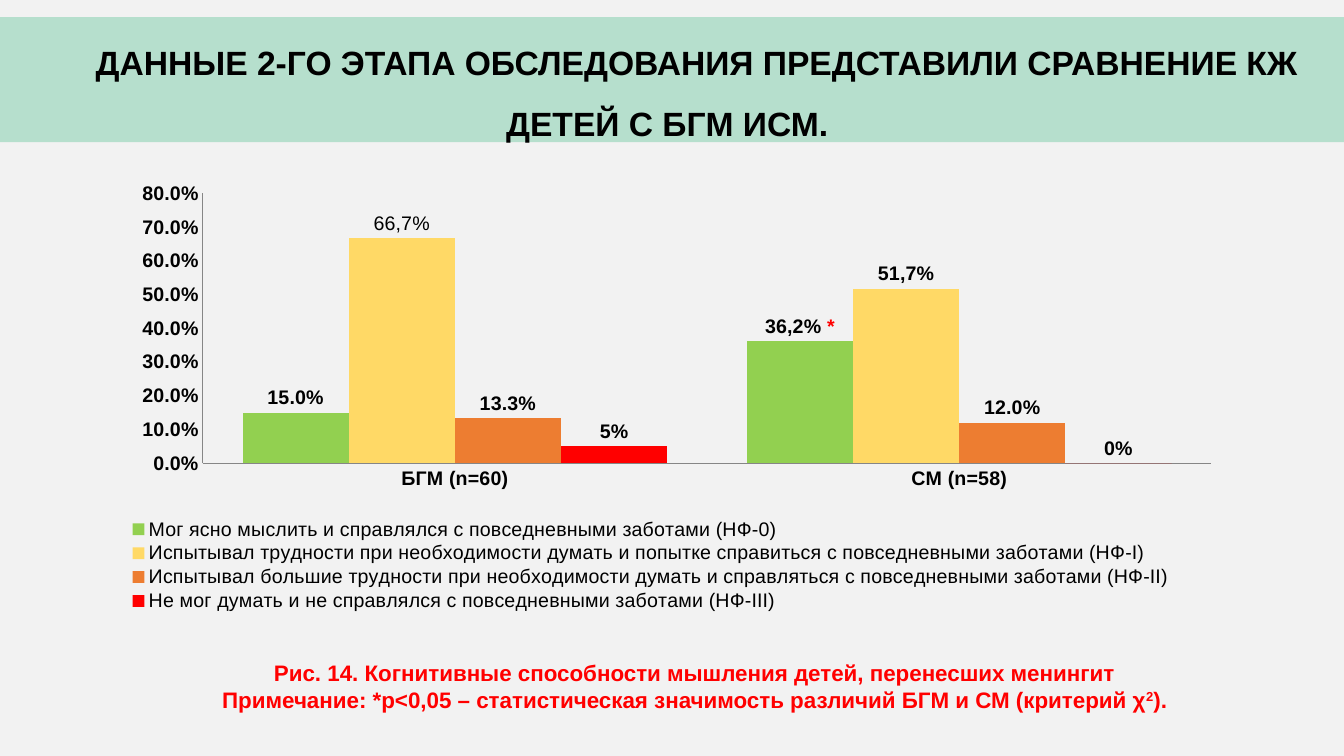
from lxml import etree
from pptx import Presentation
from pptx.chart.data import CategoryChartData
from pptx.dml.color import RGBColor
from pptx.enum.chart import XL_CHART_TYPE, XL_LABEL_POSITION, XL_LEGEND_POSITION, XL_TICK_MARK
from pptx.enum.shapes import MSO_SHAPE
from pptx.enum.text import MSO_ANCHOR, PP_ALIGN
from pptx.oxml import parse_xml
from pptx.oxml.ns import nsdecls, qn
from pptx.util import Inches, Pt

COLUMN = XL_CHART_TYPE.COLUMN_CLUSTERED
ABOVE = XL_LABEL_POSITION.OUTSIDE_END
BELOW = XL_LEGEND_POSITION.BOTTOM
NO_TICK = XL_TICK_MARK.NONE
RECT = MSO_SHAPE.RECTANGLE
TOP, LOW = MSO_ANCHOR.TOP, MSO_ANCHOR.BOTTOM
CENTER = PP_ALIGN.CENTER

FONT = "Arial"
COLORS = {"back": "F2F2F2", "band": "B6DFCD", "text": "000000", "axis": "868686",
          "green": "92D050", "yellow": "FFD966", "orange": "ED7D31", "red": "FF0000"}

GROUPS = ["БГМ (n=60)", "СМ (n=58)"]
# name, values, color, label format
SERIES = [
    ("Мог ясно мыслить и справлялся с повседневными заботами (НФ-0)",
     (0.15, 0.362), "green", "0.0%"),
    ("Испытывал трудности при необходимости думать и попытке справиться "
     "с повседневными заботами (НФ-I)", (0.667, 0.517), "yellow", "0.0%"),
    ("Испытывал большие трудности при необходимости думать и справляться "
     "с повседневными заботами (НФ-II)", (0.133, 0.12), "orange", "0.0%"),
    ("Не мог думать и не справлялся с повседневными заботами (НФ-III)",
     (0.05, 0), "red", "0%"),
]
# series, point, runs of the label
MARKS = [
    (0, 1, [("36,2% ", {}), ("*", {"color": "red"})]),
    (1, 0, [("66,7%", {"bold": False})]),
    (1, 1, [("51,7%", {})]),
]


def rgb(name):
    return RGBColor.from_string(COLORS[name])


def style(font, size=14, bold=False, color="text"):
    font.name, font.size, font.bold = FONT, Pt(size), bold
    font.color.rgb = rgb(color)


def write(para, runs, indent=0, raised=0, **look):
    """Fill a paragraph with (text, overrides) runs, or with one string."""
    if isinstance(runs, str):
        runs = [(runs, {})]
    for text, extra in runs:
        extra = dict(extra)
        base = extra.pop("base", 0)
        run = para.add_run()
        run.text = text
        style(run.font, **{**look, **extra})
        if base:
            run.font._element.set("baseline", str(base * 1000))
    para.alignment = CENTER
    if indent:
        para._p.get_or_add_pPr().set("indent", str(Inches(indent)))


def place(parent, x, y, w, h, inner=False):
    """Set a manual layout, in fractions of the chart, on a chart part."""
    old = parent.find(qn("c:layout"))
    if old is not None:
        parent.remove(old)
    layout = parse_xml(f"<c:layout {nsdecls('c')}/>")
    manual = etree.SubElement(layout, qn("c:manualLayout"))
    parts = [("layoutTarget", "inner")] if inner else []
    parts += [("xMode", "edge"), ("yMode", "edge"), ("x", x), ("y", y), ("w", w), ("h", h)]
    for tag, val in parts:
        etree.SubElement(manual, qn(f"c:{tag}")).set("val", str(val))
    if inner:
        parent.insert(0, layout)
    else:
        parent.find(qn("c:legendPos")).addnext(layout)


def add_title(slide, x, y, w, h):
    band = slide.shapes.add_shape(RECT, Inches(x), Inches(y), Inches(w), Inches(h))
    band.shadow.inherit = False
    band.fill.solid()
    band.fill.fore_color.rgb = rgb("band")
    band.line.fill.background()
    frame = band.text_frame
    frame.word_wrap, frame.vertical_anchor = True, TOP
    para = frame.paragraphs[0]
    write(para, "ДАННЫЕ 2-ГО ЭТАПА ОБСЛЕДОВАНИЯ ПРЕДСТАВИЛИ СРАВНЕНИЕ КЖ ДЕТЕЙ С БГМ ИСМ. ",
          size=24, bold=True, indent=0.49)
    para.line_spacing, para.space_after = 1.5, Pt(10)


def add_bars(slide, x, y, w, h):
    data = CategoryChartData()
    data.categories = GROUPS
    for name, vals, _, _ in SERIES:
        data.add_series(name, vals)
    chart = slide.shapes.add_chart(COLUMN, Inches(x), Inches(y), Inches(w), Inches(h), data).chart
    chart.has_title = False
    style(chart.font)
    plot = chart.plots[0]
    plot.gap_width, plot.overlap, plot.vary_by_categories = 75, 0, False

    for row, (_, _, color, fmt) in zip(plot.series, SERIES):
        row.format.fill.solid()
        row.format.fill.fore_color.rgb = rgb(color)
        row.invert_if_negative = False
        labels = row.data_labels
        labels.show_value, labels.position = True, ABOVE
        labels.number_format, labels.number_format_is_linked = fmt, False
        style(labels.font, bold=True)
    for row, point, runs in MARKS:
        label = plot.series[row].points[point].data_label
        write(label.text_frame.paragraphs[0], runs, bold=True)
        label.position = ABOVE

    for axis in (chart.category_axis, chart.value_axis):
        axis.major_tick_mark = axis.minor_tick_mark = NO_TICK
        axis.has_major_gridlines = False
        axis.format.line.color.rgb = rgb("axis")
        axis.format.line.width = Pt(0.75)
        style(axis.tick_labels.font, bold=True)
    scale = chart.value_axis
    scale.minimum_scale, scale.maximum_scale, scale.major_unit = 0, 0.8, 0.1
    scale.tick_labels.number_format = "0.0%"
    scale.tick_labels.number_format_is_linked = False

    chart.has_legend = True
    legend = chart.legend
    legend.position, legend.include_in_layout = BELOW, False
    style(legend.font)
    place(legend._element, 0.03, 0.78, 0.94, 0.22)
    place(chart._chartSpace.chart.plotArea, 0.1, 0.05, 0.9, 0.61, inner=True)


def add_note(slide, x, y, w, h):
    frame = slide.shapes.add_textbox(Inches(x), Inches(y), Inches(w), Inches(h)).text_frame
    frame.word_wrap, frame.vertical_anchor = True, LOW
    look = {"size": 16, "bold": True, "color": "red", "indent": 0.45}
    write(frame.paragraphs[0],
          "Рис. 14. Когнитивные способности мышления детей, перенесших менингит", **look)
    write(frame.add_paragraph(),
          [("Примечание: *p<0,05 – статистическая значимость различий БГМ и СМ (критерий χ", {}),
           ("2", {"base": 30}), (").", {})], **look)


def main():
    deck = Presentation()
    deck.slide_width, deck.slide_height = Inches(13.33), Inches(7.5)
    slide = deck.slides.add_slide(deck.slide_layouts[6])
    slide.background.fill.solid()
    slide.background.fill.fore_color.rgb = rgb("back")
    add_bars(slide, 0.9, 1.7, 11.12, 4.39)
    add_note(slide, 1.58, 6.28, 10.17, 0.84)
    add_title(slide, 0, 0.17, 13.33, 1.24)
    deck.save("out.pptx")


if __name__ == "__main__":
    main()
